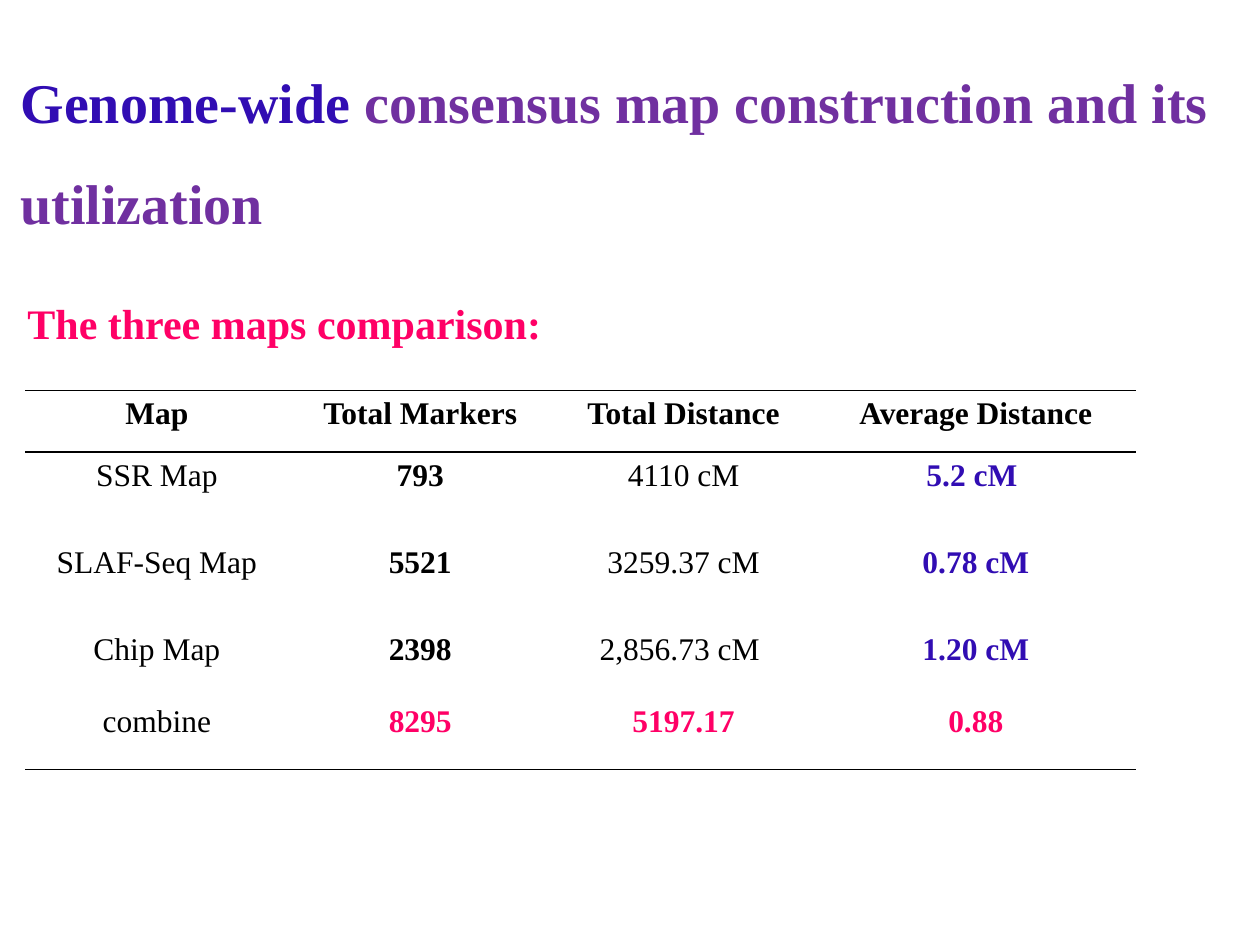
"""Build a slide that compares three genome maps in a ruled table."""
from lxml import etree
from pptx import Presentation
from pptx.dml.color import RGBColor
from pptx.enum import text as t
from pptx.oxml import ns
from pptx.util import Pt

BLACK = RGBColor(0x00, 0x00, 0x00)
WHITE = RGBColor(0xFF, 0xFF, 0xFF)
BLUE = RGBColor(0x31, 0x0D, 0xB3)
PURPLE = RGBColor(0x70, 0x30, 0xA0)
PINK = RGBColor(0xFF, 0x00, 0x66)
PLAIN = "{2D5ABB26-0587-4C30-8999-92F81FD0307C}"

WIDTHS = [150.5, 150.5, 150.5, 183.5]
HEIGHTS = [35.3, 49.7, 49.7, 41, 41]
ROWS = [
    ["Map", "Total Markers", "Total Distance", "Average Distance"],
    ["SSR Map", "793", "4110 cM", "5.2 cM "],
    ["SLAF-Seq Map", "5521", "3259.37 cM", "0.78 cM"],
    ["Chip Map", "2398", "2,856.73 cM ", "1.20 cM"],
    ["combine", "8295", "5197.17", "0.88"],
]
BODY = [(BLACK, False), (BLACK, True), (BLACK, False), (BLUE, True)]
LOOKS = [
    [(BLACK, True)] * 4,
    BODY, BODY, BODY,
    [(BLACK, False)] + [(PINK, True)] * 3,
]
RULES = {0: ("lnT", "lnB"), 4: ("lnB",)}


def apply(item, form):
    """Set each attribute in a dict on an object."""
    for key, value in form.items():
        setattr(item, key, value)


class Page:
    """Hold the font and the slide, and draw each kind of element."""

    def __init__(self, deck, face):
        """Add a title-only slide to the deck."""
        self.face = face
        self.slide = deck.slides.add_slide(deck.slide_layouts[5])

    def words(self, para, copy, size, color, bold=True):
        """Add one styled run to a paragraph."""
        run = para.add_run()
        run.text = copy
        apply(run.font, {"name": self.face, "size": Pt(size), "bold": bold})
        run.font.color.rgb = color

    def place(self, shape, box, wrap):
        """Position a text shape and return its first paragraph."""
        apply(shape, dict(zip(("left", "top", "width", "height"), map(Pt, box))))
        apply(shape.text_frame, {
            "word_wrap": wrap,
            "auto_size": t.MSO_AUTO_SIZE.SHAPE_TO_FIT_TEXT,
            "vertical_anchor": t.MSO_ANCHOR.TOP,
        })
        para = shape.text_frame.paragraphs[0]
        para.alignment = t.PP_ALIGN.LEFT
        return para

    def title(self, parts, box, size):
        """Fill the title with coloured parts."""
        para = self.place(self.slide.shapes.title, box, True)
        para.line_spacing = 1.5
        for copy, color in parts:
            self.words(para, copy, size, color)

    def label(self, copy, box, size, color):
        """Add a text box on one line."""
        shape = self.slide.shapes.add_textbox(*map(Pt, box))
        self.words(self.place(shape, box, False), copy, size, color)

    def rule(self, cell, tag):
        """Draw a black line on one edge of a cell."""
        line = etree.Element(ns.qn("a:" + tag), w=str(Pt(1)))
        fill = etree.SubElement(line, ns.qn("a:solidFill"))
        etree.SubElement(fill, ns.qn("a:srgbClr"), val=str(BLACK))
        props = cell._tc.get_or_add_tcPr()
        props.insert(len(props.findall(ns.qn("a:lnT"))), line)

    def table(self, left, top, size):
        """Add the table of maps."""
        frame = self.slide.shapes.add_table(
            len(ROWS), len(WIDTHS), Pt(left), Pt(top),
            Pt(sum(WIDTHS)), Pt(sum(HEIGHTS)))
        grid = frame.table
        apply(grid, {"first_row": False, "horz_banding": False})
        grid._tbl.tblPr.find(ns.qn("a:tableStyleId")).text = PLAIN
        for col, width in zip(grid.columns, WIDTHS):
            col.width = Pt(width)
        for row, height in zip(grid.rows, HEIGHTS):
            row.height = Pt(height)
        for r, (row, looks) in enumerate(zip(ROWS, LOOKS)):
            for c, (copy, (color, bold)) in enumerate(zip(row, looks)):
                cell = grid.cell(r, c)
                cell.fill.solid()
                cell.fill.fore_color.rgb = WHITE
                para = cell.text_frame.paragraphs[0]
                para.alignment = t.PP_ALIGN.CENTER
                self.words(para, copy, size, color, bold)
                for tag in RULES.get(r, ()):
                    self.rule(cell, tag)


def main():
    """Build and save the deck."""
    deck = Presentation()
    apply(deck, {"slide_width": Pt(720), "slide_height": Pt(540)})
    page = Page(deck, "Times New Roman")
    page.table(14.4, 223, 18)
    page.label("The three maps comparison:", (8.6, 166.3, 311, 58.3), 24, PINK)
    page.title([
        ("Genome-wide ", BLUE),
        ("consensus map construction and its utilization", PURPLE),
    ], (4.5, 15.8, 751, 116.6), 32)
    deck.save("out.pptx")


if __name__ == "__main__":
    main()
